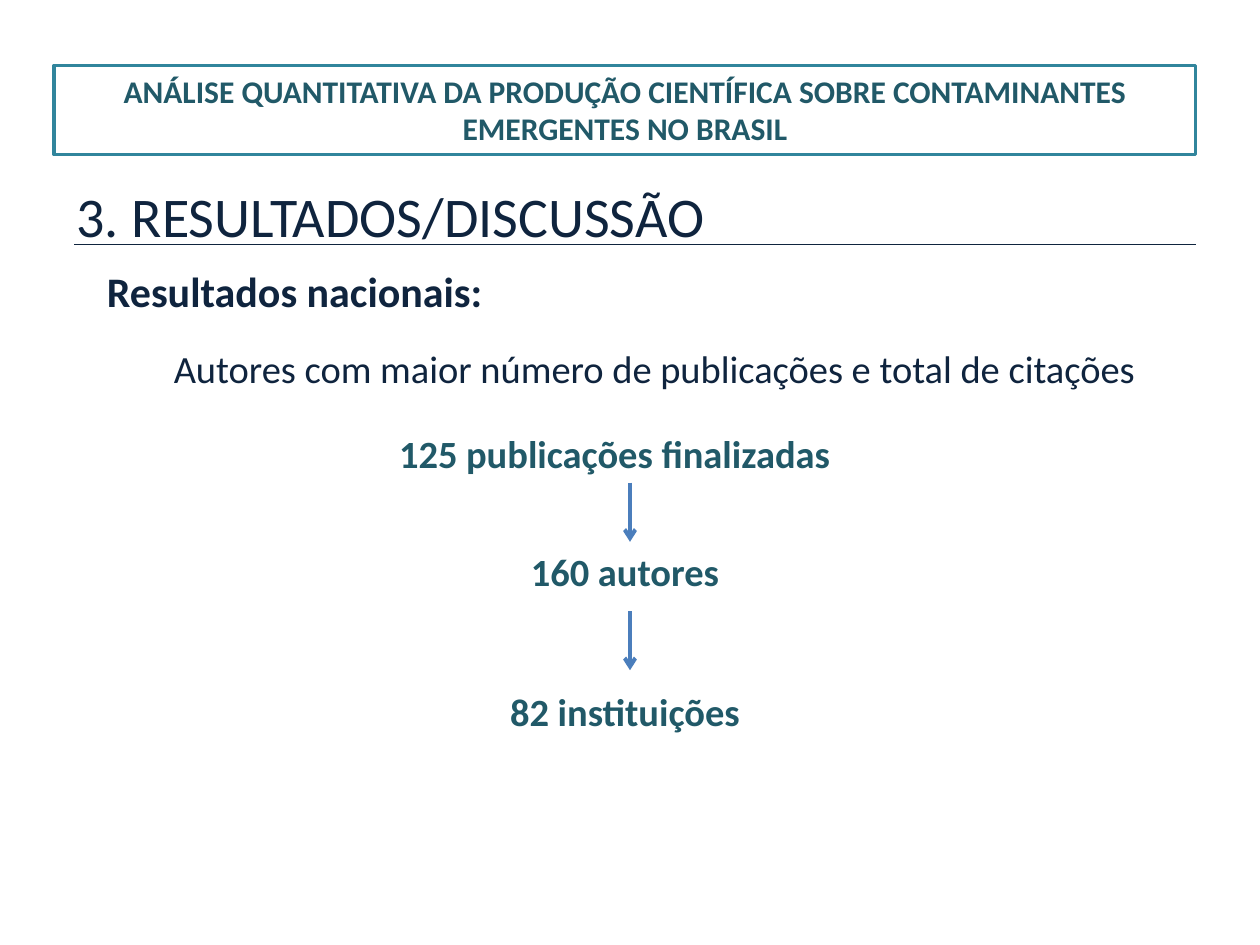
import pptx
import pptx.dml.color
import pptx.enum.shapes
import pptx.enum.text
import pptx.oxml.ns
import pptx.util
from lxml import etree

Pt = pptx.util.Pt
qn = pptx.oxml.ns.qn
ALIGN = pptx.enum.text.PP_ALIGN


def color(value):
    return pptx.dml.color.RGBColor.from_string(value)


class SlideBuilder:
    font = "Calibri"
    navy = "0F243E"
    teal = "215968"
    border = "31859C"
    blue = "4B7EBC"

    def __init__(self, prs):
        self.s = prs.slides.add_slide(prs.slide_layouts[6])

    def set_text(self, tf, lines, size, hue, bold, align, wrap=True, gap=0):
        tf.word_wrap = wrap
        tf.vertical_anchor = pptx.enum.text.MSO_ANCHOR.TOP
        for i, line in enumerate(lines):
            p = tf.add_paragraph() if i else tf.paragraphs[0]
            p.text = line
            p.alignment = align
            if i:
                p.space_before = Pt(gap)
            p.font.name = self.font
            p.font.size = Pt(size)
            p.font.bold = bold
            p.font.color.rgb = color(hue)

    def text(self, x, y, w, h, lines, size, hue, bold=False,
             align=ALIGN.LEFT, wrap=True, gap=0):
        sp = self.s.shapes.add_textbox(Pt(x), Pt(y), Pt(w), Pt(h))
        self.set_text(sp.text_frame, lines, size, hue, bold, align, wrap, gap)

    def frame(self, x, y, w, h, line, size):
        sp = self.s.shapes.add_shape(
            pptx.enum.shapes.MSO_SHAPE.RECTANGLE, Pt(x), Pt(y), Pt(w), Pt(h))
        sp.shadow.inherit = False
        sp.fill.background()
        sp.line.color.rgb = color(self.border)
        sp.line.width = Pt(2)
        self.set_text(sp.text_frame, [line], size, self.teal, True, ALIGN.CENTER)

    def line(self, x1, y1, x2, y2, hue, width, arrow=False):
        cx = self.s.shapes.add_connector(
            pptx.enum.shapes.MSO_CONNECTOR.STRAIGHT,
            Pt(x1), Pt(y1), Pt(x2), Pt(y2))
        cx.line.color.rgb = color(hue)
        cx.line.width = Pt(width)
        sp_pr = cx._element.spPr
        if arrow:
            etree.SubElement(sp_pr.find(qn("a:ln")), qn("a:tailEnd"), type="arrow")
        etree.SubElement(sp_pr, qn("a:effectLst"))


def main():
    prs = pptx.Presentation()
    prs.slide_width, prs.slide_height = Pt(720), Pt(540)
    b = SlideBuilder(prs)

    # Section heading with rule
    b.text(36.7, 100, 408, 46, ["3. RESULTADOS/DISCUSSÃO"], 32, b.navy)
    b.line(42.5, 139.7, 683.3, 139.7, b.navy, 0.75)

    # Framed study title
    b.frame(31, 37.4, 652.3, 51,
            "ANÁLISE QUANTITATIVA DA PRODUÇÃO CIENTÍFICA SOBRE "
            "CONTAMINANTES EMERGENTES NO BRASIL", 18)

    # Subheadings
    b.text(54, 148.3, 340, 58, ["Resultados nacionais:"], 24, b.navy, True)
    b.text(76.3, 193.7, 595.4, 34,
           ["Autores com maior número de publicações e total de citações"],
           22, b.navy, align=ALIGN.CENTER)

    # Flow of counts
    b.text(221, 242, 263.5, 34, ["125 publicações finalizadas"],
           22, b.teal, True, wrap=False)
    b.text(275.8, 309.6, 162.7, 114, ["160 autores", "82 instituições"],
           22, b.teal, True, ALIGN.CENTER, wrap=False, gap=53.5)
    for top in (275.8, 349.2):
        b.line(360, top, 360, top + 33.8, b.blue, 2.25, arrow=True)

    prs.save("out.pptx")


if __name__ == "__main__":
    main()
